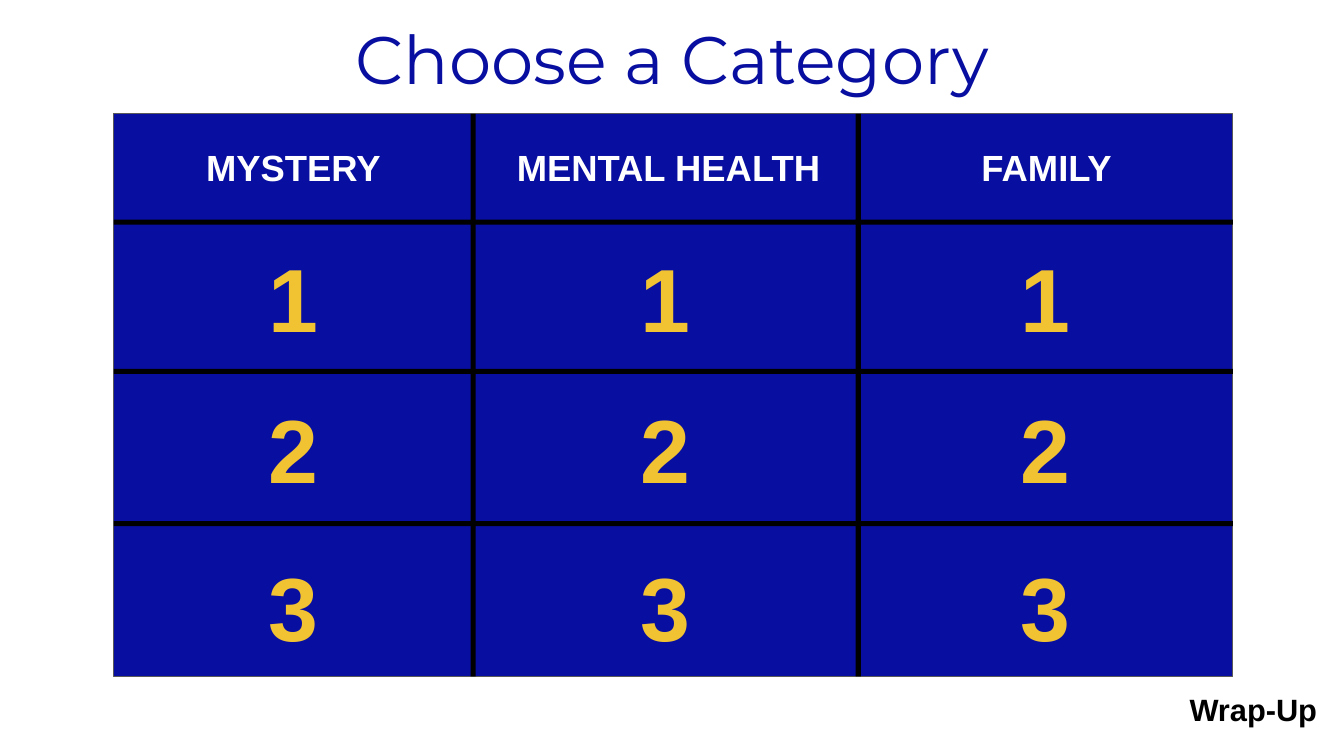
from dataclasses import dataclass

from pptx import Presentation
from pptx import util as u
from pptx.dml.color import RGBColor
from pptx.enum import shapes, text


@dataclass(frozen=True)
class Theme:
    blue: str = "080EA0"
    gold: str = "F1C232"
    white: str = "FFFFFF"
    black: str = "000000"
    gray: str = "595959"
    display: str = "Montserrat"
    body: str = "Arial"
    title: int = 48
    number: int = 64
    header: int = 26
    button: int = 22


COLUMN_EDGES = (8.48, 35.21, 63.86, 91.73)
ROW_EDGES = (15.07, 29.4, 49.13, 69.27, 89.47)
ROW_SHIFTS = (-0.2, 0, 0, 0.8)
HEADERS = (("MYSTERY", 0), ("MENTAL HEALTH", 0.22), ("FAMILY", 0.08))
BAR_WIDTH, BAR_HEIGHT = 0.38, 0.67


class Board:
    def __init__(self, deck, theme):
        self.deck = deck
        self.theme = theme
        self.page = deck.slides.add_slide(deck.slide_layouts[5])

    def place(self, left, top, width, height):
        across, down = self.deck.slide_width / 100, self.deck.slide_height / 100
        return [round(n) for n in (left * across, top * down, width * across, height * down)]

    def cell(self, column, row):
        left, right = COLUMN_EDGES[column:column + 2]
        top, bottom = ROW_EDGES[row:row + 2]
        return left, top, right - left, bottom - top

    def set_text(self, box, words, size, color, font, bold=True, anchor=text.MSO_ANCHOR.MIDDLE):
        frame = box.text_frame
        inset = u.Inches(0.1)
        settings = {
            "word_wrap": True, "auto_size": text.MSO_AUTO_SIZE.NONE,
            "vertical_anchor": anchor, "margin_left": inset,
            "margin_right": inset, "margin_top": inset, "margin_bottom": inset,
        }
        for name, value in settings.items():
            setattr(frame, name, value)
        para = frame.paragraphs[0]
        para.alignment = text.PP_ALIGN.CENTER
        span = para.add_run()
        span.text = words
        for name, value in {"size": u.Pt(size), "name": font, "bold": bold}.items():
            setattr(span.font, name, value)
        span.font.color.rgb = RGBColor.from_string(color)

    def title(self, words, *area):
        box = self.page.shapes.title
        for name, value in zip(("left", "top", "width", "height"), self.place(*area)):
            setattr(box, name, value)
        self.set_text(box, words, self.theme.title, self.theme.blue, self.theme.display,
                      bold=False, anchor=text.MSO_ANCHOR.TOP)

    def label(self, words, area, size, color):
        box = self.page.shapes.add_textbox(*self.place(*area))
        self.set_text(box, words, size, color, self.theme.body)

    def panel(self, area, fill, line=None):
        box = self.page.shapes.add_shape(shapes.MSO_SHAPE.RECTANGLE, *self.place(*area))
        box.shadow.inherit = False
        box.fill.solid()
        box.fill.fore_color.rgb = RGBColor.from_string(fill)
        if line:
            box.line.color.rgb = RGBColor.from_string(line)
            box.line.width = u.Pt(0.75)
        else:
            box.line.fill.background()

    def grid(self):
        theme = self.theme
        left, top = COLUMN_EDGES[0], ROW_EDGES[0]
        width, height = COLUMN_EDGES[-1] - left, ROW_EDGES[-1] - top
        self.panel((left, top, width, height), theme.blue, theme.gray)
        for edge in COLUMN_EDGES[1:-1]:
            self.panel((edge - BAR_WIDTH / 2, top, BAR_WIDTH, height), theme.black)
        for edge in ROW_EDGES[1:-1]:
            self.panel((left, edge - BAR_HEIGHT / 2, width, BAR_HEIGHT), theme.black)

    def entry(self, words, column, row, size, color, nudge=0):
        left, top, width, height = self.cell(column, row)
        self.label(words, (left + nudge, top + ROW_SHIFTS[row], width, height), size, color)


def main():
    deck = Presentation()
    deck.slide_width, deck.slide_height = u.Inches(13.33), u.Inches(7.5)
    theme = Theme()
    board = Board(deck, theme)
    board.title("Choose a Category", 9.83, 0.93, 80.35, 13.47)
    board.grid()
    for column, (header, nudge) in enumerate(HEADERS):
        board.entry(header, column, 0, theme.header, theme.white, nudge)
        for row in range(1, len(ROW_EDGES) - 1):
            board.entry(str(row), column, row, theme.number, theme.gold)
    board.label("Wrap-Up", (86.5, 90, 13.5, 7.6), theme.button, theme.black)
    deck.save("out.pptx")


if __name__ == "__main__":
    main()
